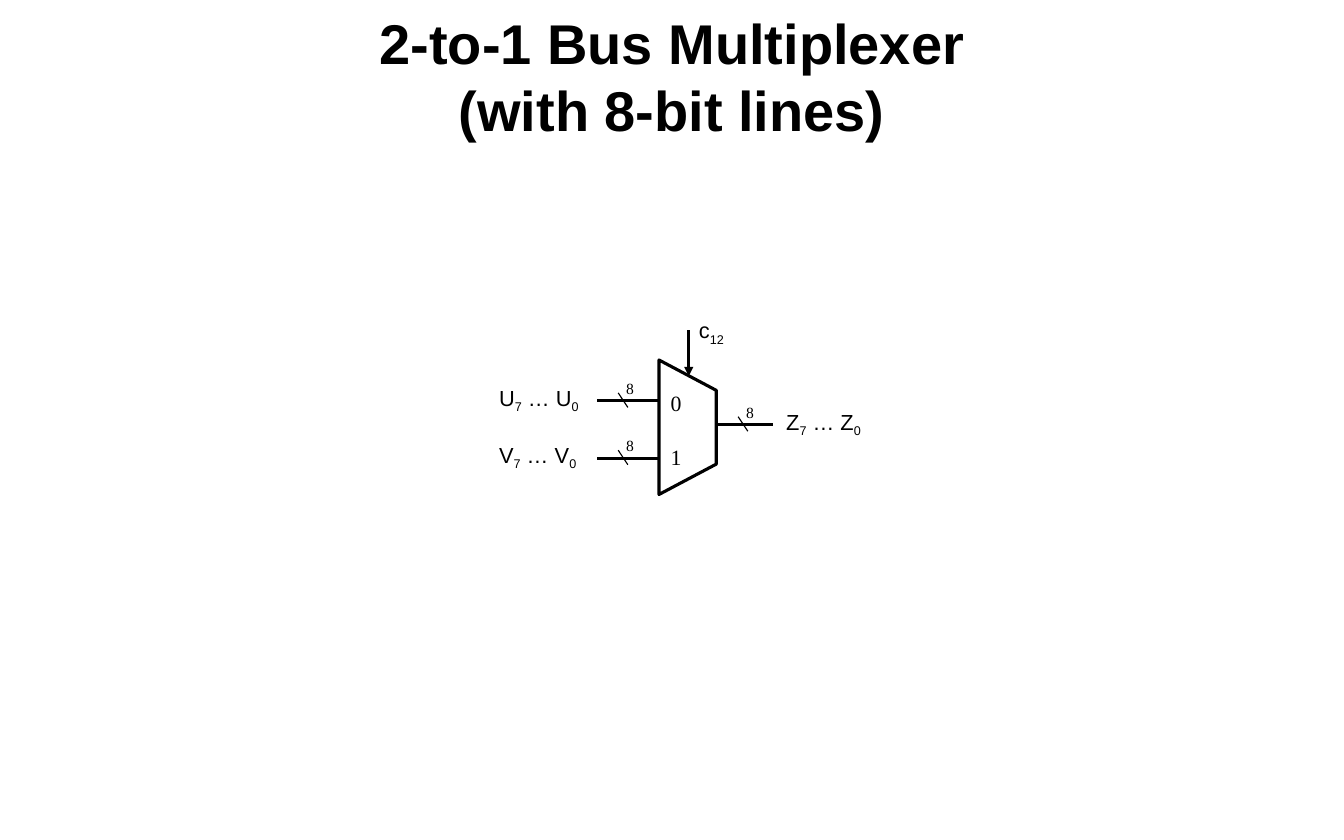
from lxml import etree
from pptx import Presentation
from pptx.dml.color import RGBColor
from pptx.enum.shapes import MSO_CONNECTOR, MSO_SHAPE
from pptx.enum.text import MSO_ANCHOR, MSO_AUTO_SIZE, PP_ALIGN
from pptx.oxml.ns import qn
from pptx.util import Cm, Pt

BLACK = RGBColor(0, 0, 0)
WHITE = RGBColor(255, 255, 255)
STRAIGHT = MSO_CONNECTOR.STRAIGHT
TRAPEZOID = MSO_SHAPE.TRAPEZOID
MIDDLE = MSO_ANCHOR.MIDDLE
FIT_SHAPE = MSO_AUTO_SIZE.SHAPE_TO_FIT_TEXT
LEFT, CENTER = PP_ALIGN.LEFT, PP_ALIGN.CENTER
SANS, SERIF = "Arial", "Times New Roman"


class Diagram:
    def __init__(self, page):
        self.page = page
        self.signal_size = 14
        self.width_size = 10
        self.wire_weight = 2

    def text_box(self, left, top, width, height, wrap=False):
        box = self.page.shapes.add_textbox(Cm(left), Cm(top), Cm(width), Cm(height))
        box.text_frame.word_wrap = wrap
        if not wrap:
            box.text_frame.auto_size = FIT_SHAPE
        return box.text_frame

    def style(self, para, size, face, bold=False, align=LEFT):
        para.alignment = align
        para.font.size = Pt(size)
        para.font.name = face
        para.font.bold = bold
        para.font.color.rgb = BLACK

    def title(self, text):
        frame = self.text_box(2.54, 0.03, 25.4, 3.38, wrap=True)
        frame.vertical_anchor = MIDDLE
        para = frame.paragraphs[0]
        para.text = text
        self.style(para, 36, SANS, bold=True, align=CENTER)

    def signal(self, left, top, width, pieces):
        para = self.text_box(left, top, width, 0.86).paragraphs[0]
        for index, piece in enumerate(pieces):
            span = para.add_run()
            span.text = piece
            if index % 2:
                span._r.get_or_add_rPr().set("baseline", "-25000")
        self.style(para, self.signal_size, SANS)

    def line(self, start, end, weight, arrow=False):
        x1, y1, x2, y2 = map(Cm, (*start, *end))
        line = self.page.shapes.add_connector(STRAIGHT, x1, y1, x2, y2)
        line.line.color.rgb = BLACK
        line.line.width = Pt(weight)
        if arrow:
            outline = line.line._get_or_add_ln()
            etree.SubElement(outline, qn("a:tailEnd"), type="triangle")
        etree.SubElement(line._element.spPr, qn("a:effectLst"))

    def bus(self, left, right, y, bits):
        self.line((left, y), (right, y), self.wire_weight)
        self.line((left + 0.48, y - 0.18), (left + 0.7, y + 0.15), 0.75)
        para = self.text_box(left + 0.41, y - 0.62, 0.69, 0.69).paragraphs[0]
        para.text = bits
        self.style(para, self.width_size, SERIF)

    def multiplexer(self, left, top, width, height):
        body = self.page.shapes.add_shape(
            TRAPEZOID, Cm(left), Cm(top), Cm(width), Cm(height))
        body.rotation = 90
        body.adjustments[0] = 0.53
        body.shadow.inherit = False
        body.fill.solid()
        body.fill.fore_color.rgb = WHITE
        body.line.color.rgb = BLACK
        body.line.width = Pt(self.wire_weight)

    def ports(self, left, top, names):
        frame = self.text_box(left, top, 1.22, 2.16, wrap=True)
        frame.text = "\n".join(names)
        for para in frame.paragraphs:
            self.style(para, self.signal_size, SERIF)
        for para in frame.paragraphs[1:]:
            para.space_before = Pt(18)


def main():
    deck = Presentation()
    deck.slide_width, deck.slide_height = Cm(30.48), Cm(19.05)
    diagram = Diagram(deck.slides.add_slide(deck.slide_layouts[6]))

    diagram.title("2-to-1 Bus Multiplexer\v(with 8-bit lines)")
    diagram.multiplexer(14.07, 9.04, 3.05, 1.3)
    diagram.ports(14.96, 8.71, ["0", "1"])

    for name, y in (("U", 9.09), ("V", 10.39)):
        diagram.bus(13.54, 14.94, y, "8")
        diagram.signal(11.07, y - 0.5, 2.39, [name, "7", f" … {name}", "0"])

    diagram.bus(16.26, 17.53, 9.63, "8")
    diagram.signal(17.58, 9.14, 2.26, ["Z", "7", " … Z", "0"])

    diagram.line((15.62, 7.49), (15.62, 8.53), 1.75, arrow=True)
    diagram.signal(15.6, 7.06, 1.14, ["c", "12"])

    deck.save("out.pptx")


if __name__ == "__main__":
    main()
